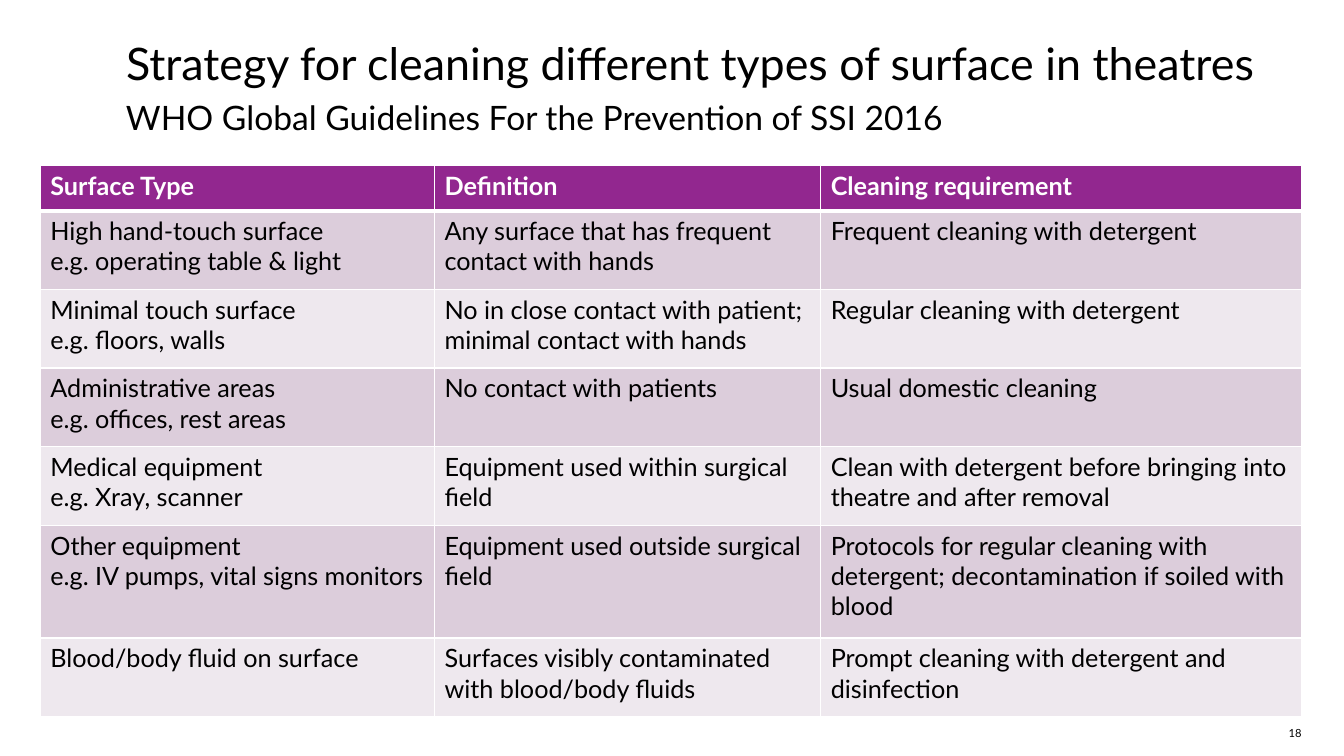
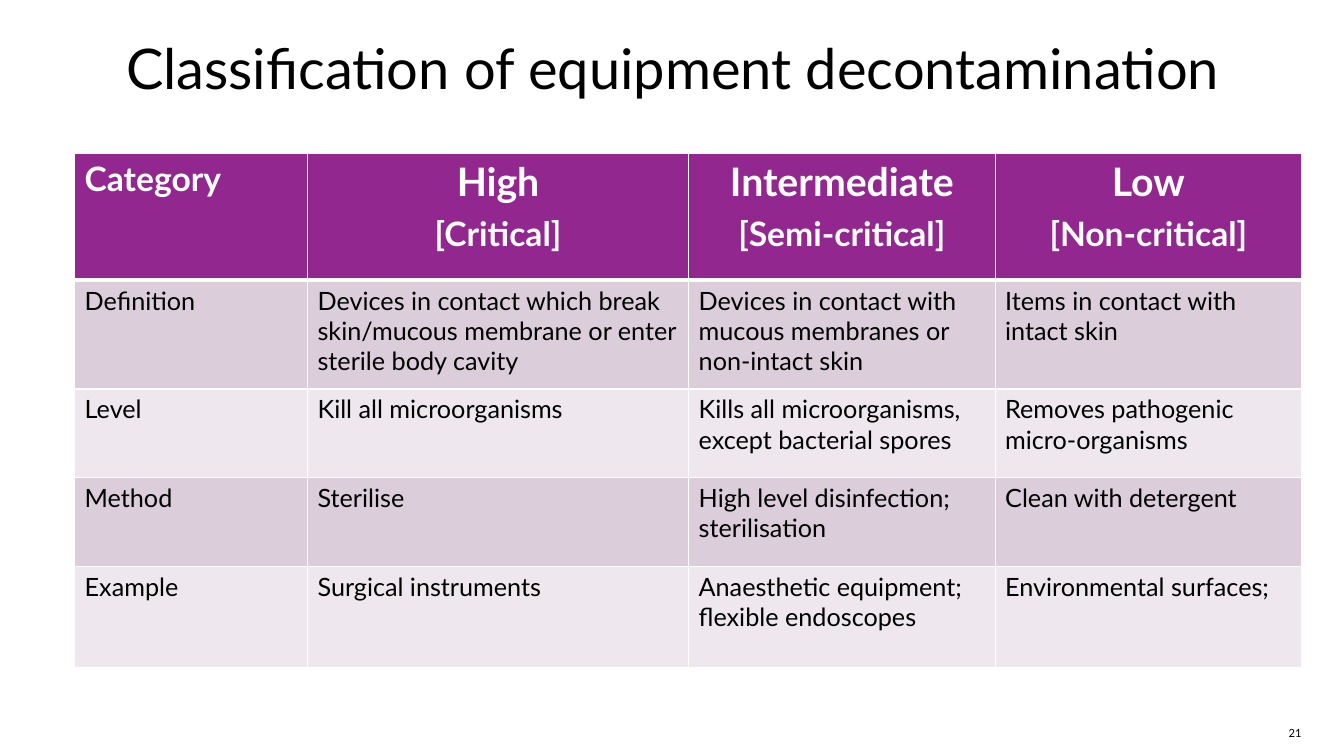
from lxml import etree
from pptx import Presentation
from pptx.dml.color import RGBColor
from pptx.enum.text import MSO_ANCHOR, MSO_AUTO_SIZE, PP_ALIGN
from pptx.oxml.ns import qn
from pptx.util import Inches, Pt

LEFT, CENTER, RIGHT = PP_ALIGN.LEFT, PP_ALIGN.CENTER, PP_ALIGN.RIGHT
TOP, NO_FIT = MSO_ANCHOR.TOP, MSO_AUTO_SIZE.NONE
BLACK = RGBColor(0x00, 0x00, 0x00)
WHITE = RGBColor(0xFF, 0xFF, 0xFF)
PURPLE = RGBColor(0x92, 0x27, 0x8F)
BANDS = (RGBColor(0xDC, 0xCD, 0xDB), RGBColor(0xEE, 0xE8, 0xEE))
FONT = "Lato"
TITLE_LEFT, RIGHT_EDGE = 1.25, 12.91

SLIDES = [
    dict(
        number="18",
        title="Strategy for cleaning different types of surface in theatres",
        title_size=32,
        subtitle="WHO Global Guidelines For the Prevention of SSI 2016",
        top=1.64,
        cols=[3.91, 3.83, 4.77],
        heights=[0.45, 0.78, 0.78, 0.78, 0.78, 1.12, 0.78],
        header_sizes=[18],
        rows=[
            ["Surface Type", "Definition", "Cleaning requirement"],
            ["High hand-touch surface\ne.g. operating table & light",
             "Any surface that has frequent contact with hands",
             "Frequent cleaning with detergent"],
            ["Minimal touch surface\ne.g. floors, walls",
             "No in close contact with patient; minimal contact with hands",
             "Regular cleaning with detergent"],
            ["Administrative areas\ne.g. offices, rest areas",
             "No contact with patients",
             "Usual domestic cleaning"],
            ["Medical equipment\ne.g. Xray, scanner",
             "Equipment used within surgical field",
             "Clean with detergent before bringing into theatre and after removal"],
            ["Other equipment\ne.g. IV pumps, vital signs monitors",
             "Equipment used outside surgical field",
             "Protocols for regular cleaning with detergent; decontamination if soiled with blood"],
            ["Blood/body fluid on surface",
             "Surfaces visibly contaminated with blood/body fluids",
             "Prompt cleaning with detergent and disinfection"],
        ],
    ),
    dict(
        number="21",
        title="Classification of equipment decontamination",
        title_size=40,
        subtitle=None,
        top=1.52,
        cols=[2.31, 3.78, 3.04, 3.04],
        heights=[1.26, 1.08, 0.88, 0.88, 1.0],
        header_sizes=[28, 24],
        rows=[
            ["Category", "High\n[Critical]", "Intermediate\n[Semi-critical]",
             "Low\n[Non-critical]"],
            ["Definition",
             "Devices in contact which break skin/mucous membrane or enter sterile body cavity",
             "Devices in contact with mucous membranes or non-intact skin",
             "Items in contact with intact skin"],
            ["Level", "Kill all microorganisms",
             "Kills all microorganisms, except bacterial spores",
             "Removes pathogenic micro-organisms"],
            ["Method", "Sterilise", "High level disinfection; sterilisation",
             "Clean with detergent"],
            ["Example", "Surgical instruments",
             "Anaesthetic equipment; flexible endoscopes",
             "Environmental surfaces;"],
        ],
    ),
]


def write(tf, text, sizes=(18,), color=BLACK, bold=False, align=LEFT,
          line=1.0, after=0, margins=None):
    """Write one paragraph per line of text; the last size serves the rest."""
    tf.word_wrap = True
    if margins:
        tf.auto_size = NO_FIT
        tf.vertical_anchor = TOP
        tf.margin_left, tf.margin_top, tf.margin_right, tf.margin_bottom = map(Inches, margins)
    for i, content in enumerate(text.split("\n")):
        p = tf.paragraphs[0] if i == 0 else tf.add_paragraph()
        p.alignment, p.line_spacing = align, line
        p.space_before, p.space_after = Pt(0), Pt(after)
        r = p.add_run()
        r.text = content
        r.font.name, r.font.size = FONT, Pt(sizes[min(i, len(sizes) - 1)])
        r.font.bold, r.font.color.rgb = bold, color


def set_borders(cell, **widths):
    """Give the cell white borders, with widths in points by side (L, R, T, B)."""
    tc_pr = cell._tc.get_or_add_tcPr()
    for side, width in widths.items():
        ln = etree.SubElement(tc_pr, qn(f"a:ln{side}"), w=str(Pt(width)))
        fill = etree.SubElement(ln, qn("a:solidFill"))
        etree.SubElement(fill, qn("a:srgbClr"), val=str(WHITE))


prs = Presentation()
prs.slide_width, prs.slide_height = Inches(13.33), Inches(7.5)
title_only = prs.slide_layouts[5]

for data in SLIDES:
    s = prs.slides.add_slide(title_only)

    title = s.shapes.title
    title.left, title.top = Inches(TITLE_LEFT), Inches(0.41)
    title.width, title.height = Inches(RIGHT_EDGE - TITLE_LEFT), Inches(0.5)
    write(title.text_frame, data["title"], sizes=[data["title_size"]],
          line=0.9, margins=(0, 0, 0, 0))

    if data["subtitle"]:
        subtitle = s.shapes.add_textbox(Inches(TITLE_LEFT), Inches(0.92),
                                        Inches(RIGHT_EDGE - TITLE_LEFT), Inches(0.4))
        write(subtitle.text_frame, data["subtitle"], sizes=[24],
              line=1.1, after=6, margins=(0, 0, 0.2, 0))

    width = sum(data["cols"])
    table = s.shapes.add_table(
        len(data["rows"]), len(data["cols"]), Inches(RIGHT_EDGE - width),
        Inches(data["top"]), Inches(width), Inches(sum(data["heights"]))).table
    for column, col_width in zip(table.columns, data["cols"]):
        column.width = Inches(col_width)
    for row, height in zip(table.rows, data["heights"]):
        row.height = Inches(height)

    for i, texts in enumerate(data["rows"]):
        for j, text in enumerate(texts):
            cell = table.cell(i, j)
            set_borders(cell, L=1, R=1, T=3 if i == 1 else 1, B=3 if i == 0 else 1)
            cell.fill.solid()
            if i > 0:
                cell.fill.fore_color.rgb = BANDS[(i - 1) % 2]
                write(cell.text_frame, text)
                continue
            cell.fill.fore_color.rgb = PURPLE
            stacked = "\n" in text
            write(cell.text_frame, text, color=WHITE, bold=True,
                  sizes=data["header_sizes"] if stacked else data["header_sizes"][-1:],
                  align=CENTER if stacked else LEFT, after=6 if stacked else 0)

    number = s.shapes.add_textbox(Inches(RIGHT_EDGE - 0.24), Inches(7.21),
                                  Inches(0.24), Inches(0.13))
    write(number.text_frame, data["number"], sizes=[8], align=RIGHT, margins=(0, 0, 0, 0))

prs.save("out.pptx")
